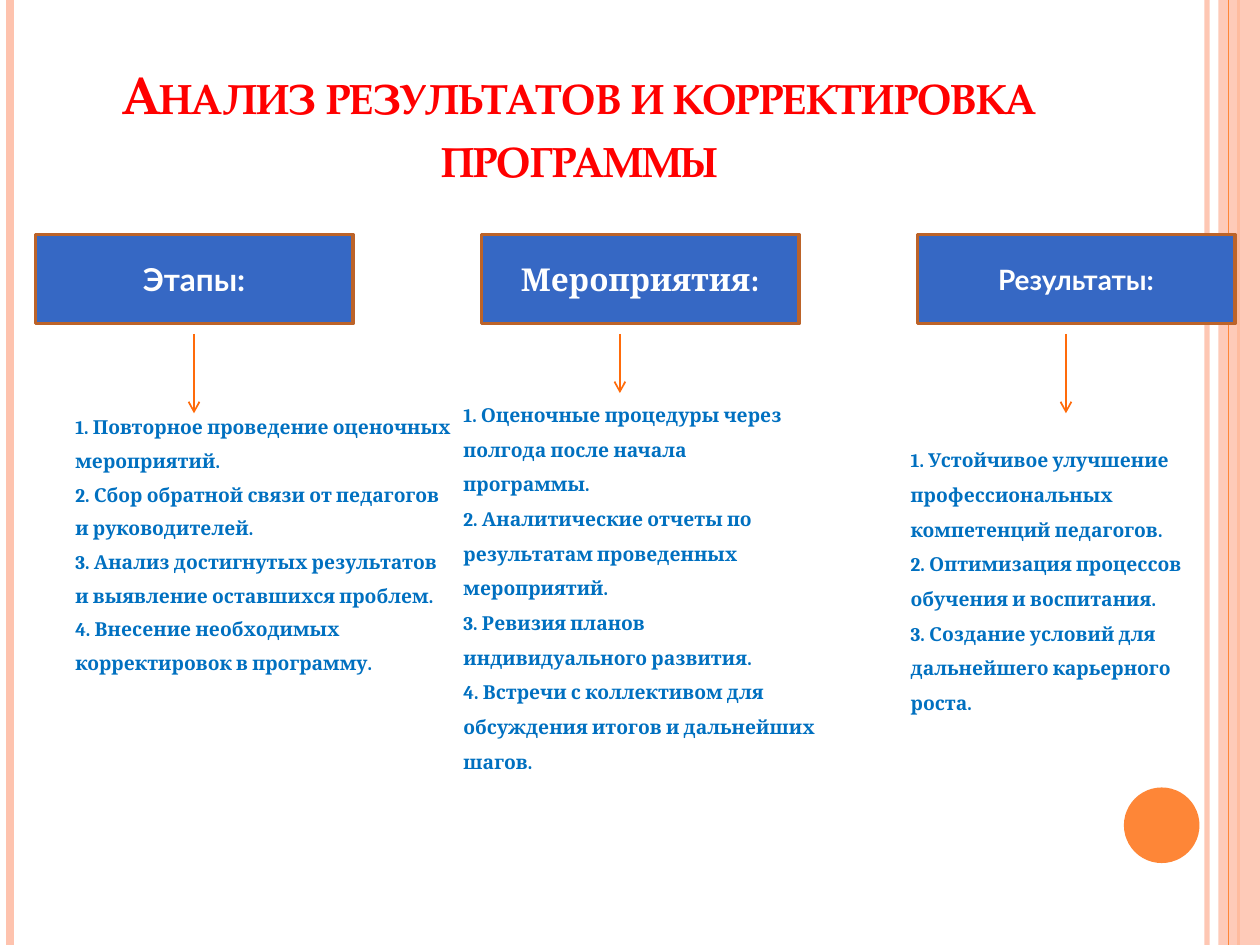
from dataclasses import dataclass

from lxml.etree import SubElement
from pptx import Presentation
from pptx.dml.color import RGBColor
from pptx.enum.shapes import MSO_CONNECTOR, MSO_SHAPE
from pptx.enum.text import MSO_ANCHOR, PP_ALIGN
from pptx.oxml.ns import qn
from pptx.util import Inches, Pt


@dataclass(frozen=True)
class Theme:
    """Colours, fonts and type sizes of the slide."""
    peach: str = "FEC3AE"
    orange: str = "FE8637"
    arrow: str = "FF6B0A"
    header_fill: str = "3668C4"
    header_line: str = "BC6329"
    title: str = "FF0000"
    body: str = "0070C0"
    white: str = "FFFFFF"
    title_font: str = "TeX Gyre Pagella"
    serif_font: str = "Cambria"
    sans_font: str = "Lato"
    title_size: int = 30
    header_size: int = 18
    small_header_size: int = 16
    body_size: int = 11


THEME = Theme()
HEADER_TOP, HEADER_WIDTH, HEADER_HEIGHT = 1.86, 2.52, 0.71
ARROW_TOP = 2.65

STAGES = [
    "1. Повторное проведение оценочных",
    "мероприятий.",
    "2. Сбор обратной связи от педагогов",
    "и руководителей.",
    "3. Анализ достигнутых результатов",
    "и выявление оставшихся проблем.",
    "4. Внесение необходимых",
    "корректировок в программу.",
]
ACTIVITIES = [
    "1. Оценочные процедуры через полгода после начала программы.",
    "2. Аналитические отчеты по результатам проведенных мероприятий.",
    "3. Ревизия планов индивидуального развития.",
    "4. Встречи с коллективом для обсуждения итогов и дальнейших шагов.",
]
RESULTS = [
    "1. Устойчивое улучшение профессиональных компетенций педагогов.",
    "2. Оптимизация процессов обучения и воспитания.",
    "3. Создание условий для дальнейшего карьерного роста.",
]


def apply_format(target, values):
    """Set every attribute named in a dict of format values."""
    for name, value in values.items():
        setattr(target, name, value)


def set_opacity(color_format_parent, percent):
    """Give the solid colour below an element an opacity."""
    color = color_format_parent.find(".//" + qn("a:srgbClr"))
    SubElement(color, qn("a:alpha"), val=str(percent * 1000))


def write_text(shape, lines, font, size, color, frame_format, paragraph_format):
    """Fill a shape with bold paragraphs of one style and return its runs."""
    frame = shape.text_frame
    frame.text = "\n".join(lines)
    apply_format(frame, {"word_wrap": True, **frame_format})
    for paragraph in frame.paragraphs:
        apply_format(paragraph, paragraph_format)
        for run in paragraph.runs:
            apply_format(run.font, {"name": font, "size": Pt(size), "bold": True})
            run.font.color.rgb = RGBColor.from_string(color)
    return [run for paragraph in frame.paragraphs for run in paragraph.runs]


def add_line(slide, x, top, bottom, color, width, opacity=100, arrow=False):
    """Draw a vertical line, with an arrowhead at its foot if asked."""
    line = slide.shapes.add_connector(
        MSO_CONNECTOR.STRAIGHT, Inches(x), Inches(top), Inches(x), Inches(bottom))
    line.line.color.rgb = RGBColor.from_string(color)
    line.line.width = Pt(width)
    properties = line.element.spPr
    if opacity < 100:
        set_opacity(properties, opacity)
    if arrow:
        SubElement(properties.find(qn("a:ln")), qn("a:tailEnd"), type="arrow")
    SubElement(properties, qn("a:effectLst"))


def add_block(slide, kind, box, fill, line=None):
    """Draw a flat filled shape with an optional outline."""
    shape = slide.shapes.add_shape(kind, *map(Inches, box))
    shape.shadow.inherit = False
    shape.fill.solid()
    shape.fill.fore_color.rgb = RGBColor.from_string(fill)
    if line:
        shape.line.color.rgb = RGBColor.from_string(line)
        shape.line.width = Pt(2)
    else:
        shape.line.fill.background()
    return shape


def add_decoration(slide, height):
    """Draw the side stripes and the corner disc."""
    add_line(slide, 9.58, 0, height, THEME.peach, 3, opacity=93)
    add_line(slide, 0.08, 0, height, THEME.peach, 4.5)
    add_line(slide, 9.83, 0, height, THEME.orange, 1.5)
    band = add_block(slide, MSO_SHAPE.RECTANGLE, (9.67, 0, 0.33, height), THEME.peach)
    set_opacity(band.element.spPr, 87)
    add_line(slide, 9.75, 0, height, THEME.orange, 0.75)
    add_block(slide, MSO_SHAPE.OVAL, (8.92, 6.25, 0.6, 0.6), THEME.orange)


def add_title(slide, text):
    """Place the small-caps title."""
    title = slide.shapes.title
    apply_format(title, {"left": Inches(0.51), "top": Inches(0.29),
                         "width": Inches(8.17), "height": Inches(1.25)})
    runs = write_text(title, [text], THEME.title_font, THEME.title_size, THEME.title,
                      {"vertical_anchor": MSO_ANCHOR.BOTTOM},
                      {"alignment": PP_ALIGN.CENTER, "line_spacing": 1.0})
    for run in runs:
        run.font._element.set("cap", "small")


def add_header(slide, left, text, font, size):
    """Draw the heading box of a column."""
    header = add_block(slide, MSO_SHAPE.RECTANGLE,
                       (left, HEADER_TOP, HEADER_WIDTH, HEADER_HEIGHT),
                       THEME.header_fill, THEME.header_line)
    write_text(header, [text], font, size, THEME.white,
               {"vertical_anchor": MSO_ANCHOR.MIDDLE}, {"alignment": PP_ALIGN.CENTER})


def add_body(slide, box, lines, paragraph_format):
    """Write the numbered text of a column."""
    body = slide.shapes.add_textbox(*map(Inches, box))
    write_text(body, lines, THEME.serif_font, THEME.body_size, THEME.body,
               {"vertical_anchor": MSO_ANCHOR.TOP}, paragraph_format)


def main():
    """Build the slide and save it."""
    presentation = Presentation()
    presentation.slide_width, presentation.slide_height = Inches(10), Inches(7.5)
    slide = presentation.slides.add_slide(presentation.slide_layouts[5])
    add_decoration(slide, 7.5)
    add_title(slide, "Анализ результатов и корректировка программы")

    spaced, open_lines = {"space_after": Pt(6)}, {"line_spacing": 1.5}
    columns = [
        (0.28, "Этапы:", THEME.sans_font, THEME.header_size,
         1.54, 3.28, (0.5, 3.25, 3.3, 2.25), STAGES, spaced),
        (3.82, "Мероприятия:", THEME.serif_font, THEME.header_size,
         4.92, 3.12, (3.58, 3.06, 2.99, 3.12), ACTIVITIES, open_lines),
        (7.28, "Результаты:", THEME.sans_font, THEME.small_header_size,
         8.46, 3.28, (7.13, 3.42, 2.36, 2.29), RESULTS, open_lines),
    ]
    for left, heading, font, size, arrow_x, arrow_end, box, lines, spacing in columns:
        add_header(slide, left, heading, font, size)
        add_body(slide, box, lines, spacing)
        add_line(slide, arrow_x, ARROW_TOP, arrow_end, THEME.arrow, 1, arrow=True)
    presentation.save("out.pptx")


if __name__ == "__main__":
    main()
